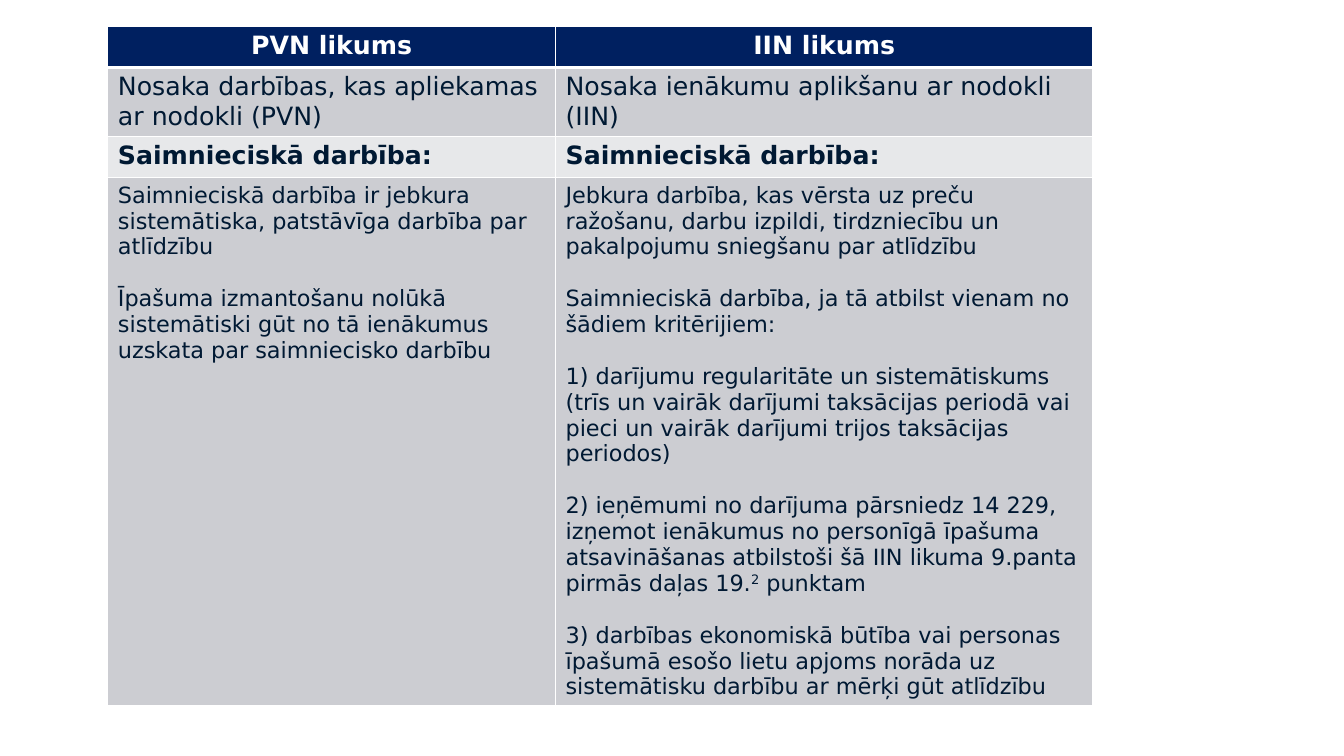
from lxml.etree import SubElement
from pptx import Presentation
from pptx.dml.color import RGBColor
from pptx.enum.text import PP_ALIGN
from pptx.oxml.ns import qn
from pptx.util import Inches, Pt

FONT = "DejaVu Sans"
WHITE = RGBColor(0xFF, 0xFF, 0xFF)
NAVY = RGBColor(0x00, 0x20, 0x60)
INK = RGBColor(0x00, 0x19, 0x33)
GREY = RGBColor(0xCC, 0xCD, 0xD2)
PALE = RGBColor(0xE7, 0xE8, 0xEA)

VAT_ACTIVITY = [
    ["Saimnieciskā darbība ir jebkura sistemātiska, patstāvīga darbība par atlīdzību"],
    ["Īpašuma izmantošanu nolūkā sistemātiski gūt no tā ienākumus uzskata par saimniecisko darbību"],
]
INCOME_ACTIVITY = [
    ["Jebkura darbība, kas vērsta uz preču ražošanu, darbu izpildi, tirdzniecību un "
     "pakalpojumu sniegšanu par atlīdzību"],
    ["Saimnieciskā darbība, ja tā atbilst vienam no šādiem kritērijiem:"],
    ["1) darījumu regularitāte un sistemātiskums (trīs un vairāk darījumi taksācijas "
     "periodā vai pieci un vairāk darījumi trijos taksācijas periodos)"],
    ["2) ieņēmumi no darījuma pārsniedz 14 229, izņemot ienākumus no personīgā īpašuma "
     "atsavināšanas atbilstoši šā IIN likuma 9.panta pirmās daļas 19.", "2", " punktam"],
    ["3) darbības ekonomiskā būtība vai personas īpašumā esošo lietu apjoms norāda uz "
     "sistemātisku darbību ar mērķi gūt atlīdzību"],
]
# height, fill, text colour, size, bold, alignment, cells
ROWS = [
    (0.41, NAVY, WHITE, 18, True, PP_ALIGN.CENTER, ([["PVN likums"]], [["IIN likums"]])),
    (0.68, GREY, INK, 18, False, PP_ALIGN.LEFT,
     ([["Nosaka darbības, kas apliekamas ar nodokli (PVN)"]],
      [["Nosaka ienākumu aplikšanu ar nodokli (IIN)"]])),
    (0.41, PALE, INK, 18, True, PP_ALIGN.LEFT,
     ([["Saimnieciskā darbība:"]], [["Saimnieciskā darbība:"]])),
    (5.23, GREY, INK, 16, False, PP_ALIGN.LEFT, (VAT_ACTIVITY, INCOME_ACTIVITY)),
]
COL_WIDTHS = (4.44, 5.33)
LEFT, TOP = 1.07, 0.26
PARAGRAPH_GAP = Pt(18.5)


def add_borders(cell, row):
    tcPr = cell._tc.get_or_add_tcPr()
    widths = {"L": 1, "R": 1, "T": 3 if row == 1 else 1, "B": 3 if row == 0 else 1}
    for side, width in widths.items():
        ln = SubElement(tcPr, qn(f"a:ln{side}"), w=str(Pt(width)))
        SubElement(SubElement(ln, qn("a:solidFill")), qn("a:srgbClr"), val=str(WHITE))


def fill_text(tf, paragraphs, color, size, bold, align):
    for i, parts in enumerate(paragraphs):
        p = tf.add_paragraph() if i else tf.paragraphs[0]
        p.alignment = align
        if i:
            p.space_before = PARAGRAPH_GAP
        for j, text in enumerate(parts):
            r = p.add_run()
            r.text = text
            r.font.name = FONT
            r.font.size = Pt(size)
            r.font.bold = bold
            r.font.color.rgb = color
            if j == 1:
                r._r.get_or_add_rPr().set("baseline", "30000")


def main():
    prs = Presentation()
    prs.slide_width, prs.slide_height = Inches(13.33), Inches(7.5)
    s = prs.slides.add_slide(prs.slide_layouts[6])
    table = s.shapes.add_table(
        len(ROWS), len(COL_WIDTHS), Inches(LEFT), Inches(TOP),
        Inches(sum(COL_WIDTHS)), Inches(sum(row[0] for row in ROWS))).table
    for column, width in zip(table.columns, COL_WIDTHS):
        column.width = Inches(width)
    for i, (height, fill, color, size, bold, align, cells) in enumerate(ROWS):
        table.rows[i].height = Inches(height)
        for j, paragraphs in enumerate(cells):
            cell = table.cell(i, j)
            add_borders(cell, i)
            cell.fill.solid()
            cell.fill.fore_color.rgb = fill
            fill_text(cell.text_frame, paragraphs, color, size, bold, align)
    prs.save("out.pptx")


if __name__ == "__main__":
    main()
